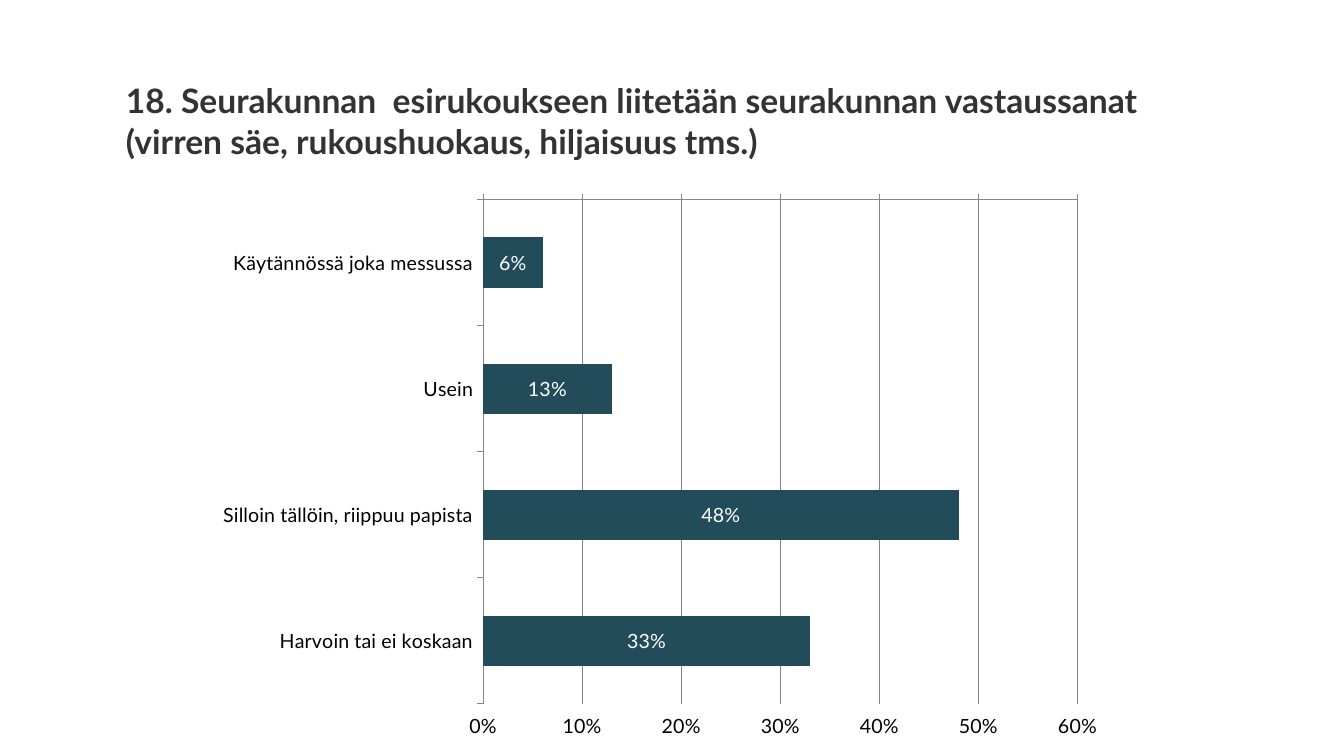
from lxml.etree import SubElement
from pptx import Presentation
from pptx.chart.data import CategoryChartData
from pptx.dml.color import RGBColor
from pptx.enum.chart import XL_CHART_TYPE, XL_LABEL_POSITION, XL_TICK_LABEL_POSITION, XL_TICK_MARK
from pptx.enum.text import MSO_ANCHOR, MSO_AUTO_SIZE, PP_ALIGN
from pptx.oxml.ns import qn
from pptx.util import Cm, Pt

FONT = "Lato"
TITLE = ("18. Seurakunnan  esirukoukseen liitetään seurakunnan vastaussanat "
         "(virren säe, rukoushuokaus, hiljaisuus tms.)")
ANSWERS = {
    "Käytännössä joka messussa": 0.06,
    "Usein": 0.13,
    "Silloin tällöin, riippuu papista": 0.48,
    "Harvoin tai ei koskaan": 0.33,
}


def rgb(color):
    return RGBColor.from_string(color)


def style_font(font, size, color, bold=False):
    font.name, font.size, font.bold = FONT, Pt(size), bold
    font.color.rgb = rgb(color)


def style_line(line, color="868686"):
    line.color.rgb = rgb(color)
    line.width = Pt(0.75)


def add_title(slide, left, top, width, height):
    sp = slide.shapes.title
    sp.left, sp.top, sp.width, sp.height = left, top, width, height
    tf = sp.text_frame
    tf.text = TITLE
    tf.word_wrap = True
    tf.auto_size = MSO_AUTO_SIZE.NONE
    tf.vertical_anchor = MSO_ANCHOR.MIDDLE
    p = tf.paragraphs[0]
    p.alignment = PP_ALIGN.LEFT
    style_font(p.font, 24, "333333", bold=True)


def place_plot(chart, **fractions):
    """Fix the inner plot area as fractions of the chart box."""
    plot_area = chart.plots[0]._element.getparent()
    layout = plot_area.find(qn("c:layout"))
    if layout is None:
        layout = SubElement(plot_area, qn("c:layout"))
        plot_area.insert(0, layout)
    manual = SubElement(layout, qn("c:manualLayout"))
    settings = {"layoutTarget": "inner", "xMode": "edge", "yMode": "edge", **fractions}
    for tag, value in settings.items():
        SubElement(manual, qn(f"c:{tag}")).set("val", str(value))


def add_answer_chart(slide, left, top, width, height):
    data = CategoryChartData(number_format="0%")
    data.categories = list(ANSWERS)
    data.add_series("Vastaukset", list(ANSWERS.values()))
    chart = slide.shapes.add_chart(
        XL_CHART_TYPE.BAR_CLUSTERED, left, top, width, height, data).chart
    chart.has_legend = chart.has_title = False
    style_font(chart.font, 14, "000000")
    place_plot(chart, x=0.305, y=0.02, w=0.653, h=0.9)

    # Bars and their labels
    plot = chart.plots[0]
    plot.gap_width = 150
    plot.vary_by_categories = False
    fill = plot.series[0].format.fill
    fill.solid()
    fill.fore_color.rgb = rgb("234C5A")
    plot.has_data_labels = True
    labels = plot.data_labels
    labels.show_value = True
    labels.number_format, labels.number_format_is_linked = "0%", False
    labels.position = XL_LABEL_POSITION.CENTER
    style_font(labels.font, 14, "FFFFFF")

    # Axes: first answer on top, percentages along the bottom
    answers, shares = chart.category_axis, chart.value_axis
    answers.reverse_order = True
    answers.tick_label_position = XL_TICK_LABEL_POSITION.LOW
    shares.tick_label_position = XL_TICK_LABEL_POSITION.HIGH
    shares.minimum_scale, shares.maximum_scale, shares.major_unit = 0, 0.6, 0.1
    shares.tick_labels.number_format = "0%"
    shares.tick_labels.number_format_is_linked = False
    shares.has_major_gridlines = True
    style_line(shares.major_gridlines.format.line)
    for axis in (answers, shares):
        axis.major_tick_mark = XL_TICK_MARK.OUTSIDE
        axis.minor_tick_mark = XL_TICK_MARK.NONE
        style_line(axis.format.line)


def main():
    prs = Presentation()
    prs.slide_width, prs.slide_height = Cm(33.87), Cm(19.05)
    slide = prs.slides.add_slide(prs.slide_layouts[5])
    add_title(slide, Cm(2.92), Cm(1.88), Cm(26.75), Cm(2.31))
    add_answer_chart(slide, Cm(5.18), Cm(4.75), Cm(22.94), Cm(14.12))
    prs.save("out.pptx")


if __name__ == "__main__":
    main()
